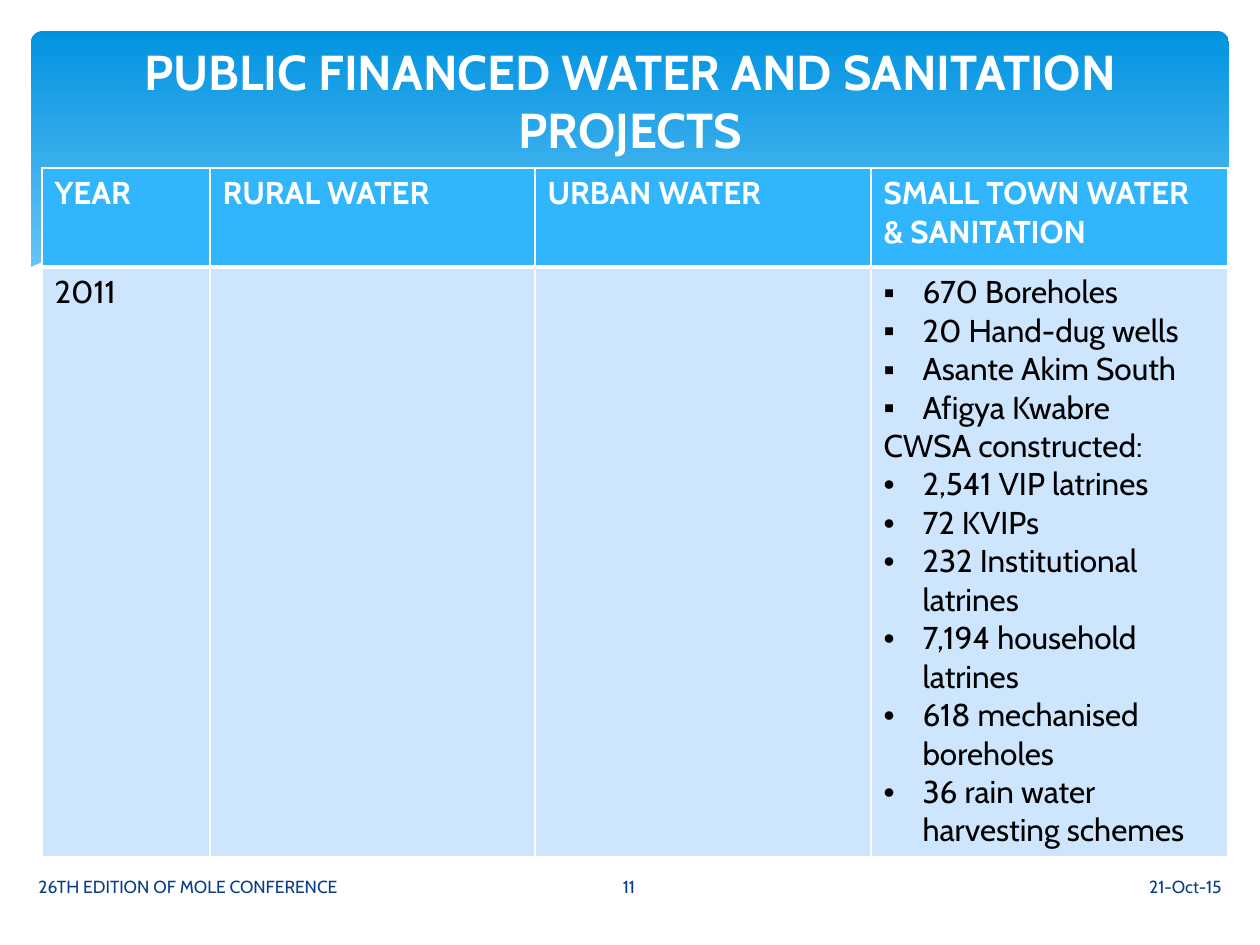
from lxml import etree
from pptx import Presentation
from pptx import util as u
from pptx.dml.color import RGBColor
from pptx.enum import shapes, text
from pptx.oxml import ns

WHITE = RGBColor(0xFF, 0xFF, 0xFF)
BLACK = RGBColor(0, 0, 0)
NAVY = RGBColor(0x07, 0x3E, 0x87)
DEEP_BLUE = RGBColor(0x02, 0x93, 0xE0)
LIGHT_BLUE = RGBColor(0x83, 0xD3, 0xFE)
HEADER_BLUE = RGBColor(0x31, 0xB6, 0xFD)
CELL_BLUE = RGBColor(0xCE, 0xE5, 0xFE)

SCALE = 914400 / 126
WAVE = [(1231, 310), (1197, 322), (1159, 334), (1118, 342), (1071, 346), (1019, 349),
        (959, 346), (892, 340), (816, 330), (730, 315), (634, 294), (563, 277),
        (492, 260), (428, 248), (368, 239), (315, 234), (266, 232), (223, 232),
        (184, 233), (150, 236), (120, 241), (96, 246), (74, 251), (58, 256),
        (45, 261), (29, 268), (29, 415), (1231, 415)]
HEADERS = ["YEAR", "RURAL WATER", "URBAN WATER", "SMALL TOWN WATER & SANITATION"]
SUPPLIES = ["670 Boreholes", "20 Hand-dug wells", "Asante Akim South", "Afigya Kwabre"]
FACILITIES = ["2,541 VIP latrines", "72 KVIPs", "232 Institutional latrines",
              "7,194 household latrines", "618 mechanised boreholes",
              "36 rain water harvesting schemes"]
RESULTS = ([("▪", line) for line in SUPPLIES] + [("", "CWSA constructed:")]
           + [("•", line) for line in FACILITIES])
FOOTERS = [(712, 522, "21-Oct-15", text.PP_ALIGN.RIGHT),
           (26, 522, "26TH EDITION OF MOLE CONFERENCE", text.PP_ALIGN.LEFT),
           (549, 160, "11", text.PP_ALIGN.CENTER)]


def px(length):
    """Turn px into EMU."""
    return u.Emu(round(length * SCALE))


def write(para, words, font="Cabin", size=18, color=BLACK, bold=False,
          align=text.PP_ALIGN.LEFT, bullet=""):
    """Add formatted words to a paragraph, with a hanging bullet if given."""
    para.alignment = align
    span = para.add_run()
    span.text = words
    span.font.name = font
    span.font.size = u.Pt(size)
    span.font.bold = bold
    span.font.color.rgb = color
    if bullet:
        props = para._p.get_or_add_pPr()
        props.set("marL", str(px(39)))
        props.set("indent", str(px(-39)))
        etree.SubElement(props, ns.qn("a:buFont"), typeface="Arial")
        etree.SubElement(props, ns.qn("a:buChar"), char=bullet)


class Slide:
    """Hold the style and the current slide."""

    def __init__(self, deck, font="Cabin"):
        """Add a title-only page to the deck."""
        self.page = deck.slides.add_slide(deck.slide_layouts[5])
        self.font = font

    def banner(self, left, top, width, height):
        """Draw the rounded gradient panel."""
        box = self.page.shapes.add_shape(shapes.MSO_SHAPE.ROUNDED_RECTANGLE,
                                         px(left), px(top), px(width), px(height))
        box.adjustments[0] = 0.034
        box.shadow.inherit = False
        box.fill.gradient()
        box.fill.gradient_angle = 270
        stops = zip(box.fill.gradient_stops, (0, 0.9), (DEEP_BLUE, LIGHT_BLUE))
        for stop, position, color in stops:
            stop.position = position
            stop.color.rgb = color
        box.line.fill.background()

    def wave(self, points):
        """Draw the white curve that cuts the panel."""
        builder = self.page.shapes.build_freeform(*points[0], scale=SCALE)
        builder.add_line_segments(points[1:], close=True)
        box = builder.convert_to_shape()
        box.shadow.inherit = False
        box.fill.solid()
        box.fill.fore_color.rgb = WHITE
        box.line.fill.background()

    def title(self, left, top, width, height, words):
        """Place and fill the title placeholder above the panel."""
        box = self.page.shapes.title
        box.left, box.top, box.width, box.height = map(px, (left, top, width, height))
        box.text_frame.word_wrap = True
        box.text_frame.vertical_anchor = text.MSO_ANCHOR.MIDDLE
        write(box.text_frame.paragraphs[0], words, font=self.font, size=28,
              color=WHITE, bold=True, align=text.PP_ALIGN.CENTER)
        self.page.shapes._spTree.append(box._element)

    def label(self, left, top, width, height, words, align):
        """Add a footer text."""
        box = self.page.shapes.add_textbox(px(left), px(top), px(width), px(height))
        box.text_frame.word_wrap = True
        box.text_frame.vertical_anchor = text.MSO_ANCHOR.MIDDLE
        write(box.text_frame.paragraphs[0], words, font=self.font, size=10,
              color=NAVY, align=align)

    def table(self, left, top, widths, heights):
        """Add an empty table with the given column widths and row heights."""
        grid = self.page.shapes.add_table(len(heights), len(widths), px(left), px(top),
                                          px(sum(widths)), px(sum(heights))).table
        for column, width in zip(grid.columns, widths):
            column.width = px(width)
        for row, height in zip(grid.rows, heights):
            row.height = px(height)
        return grid

    def cell(self, cell, lines, fill, top=1, bottom=1, **style):
        """Border, fill and write one cell from (bullet, words) lines."""
        props = cell._tc.get_or_add_tcPr()
        for side, width in zip("LRTB", (1, 1, top, bottom)):
            line = etree.SubElement(props, ns.qn(f"a:ln{side}"), w=str(u.Pt(width)))
            solid = etree.SubElement(line, ns.qn("a:solidFill"))
            etree.SubElement(solid, ns.qn("a:srgbClr"), val=str(WHITE))
        cell.fill.solid()
        cell.fill.fore_color.rgb = fill
        frame = cell.text_frame
        for index, (bullet, words) in enumerate(lines):
            para = frame.add_paragraph() if index else frame.paragraphs[0]
            write(para, words, font=self.font, bullet=bullet, **style)


def main():
    """Build the slide."""
    deck = Presentation()
    deck.slide_width, deck.slide_height = px(1260), px(945)
    slide = Slide(deck)
    slide.banner(31, 31, 1198, 340)
    slide.wave(WAVE)
    grid = slide.table(42, 168, [168, 325, 336, 357], [99, 567])
    bodies = [[("", "2011")], [], [], RESULTS]
    for column, (header, body) in enumerate(zip(HEADERS, bodies)):
        slide.cell(grid.cell(0, column), [("", header)], HEADER_BLUE, bottom=3,
                   color=WHITE, bold=True)
        slide.cell(grid.cell(1, column), body, CELL_BLUE, top=3)
    for left, width, words, align in FOOTERS:
        slide.label(left, 862, width, 50, words, align)
    slide.title(63, 21, 1134, 158, "PUBLIC FINANCED WATER AND SANITATION PROJECTS")
    deck.save("out.pptx")


if __name__ == "__main__":
    main()
